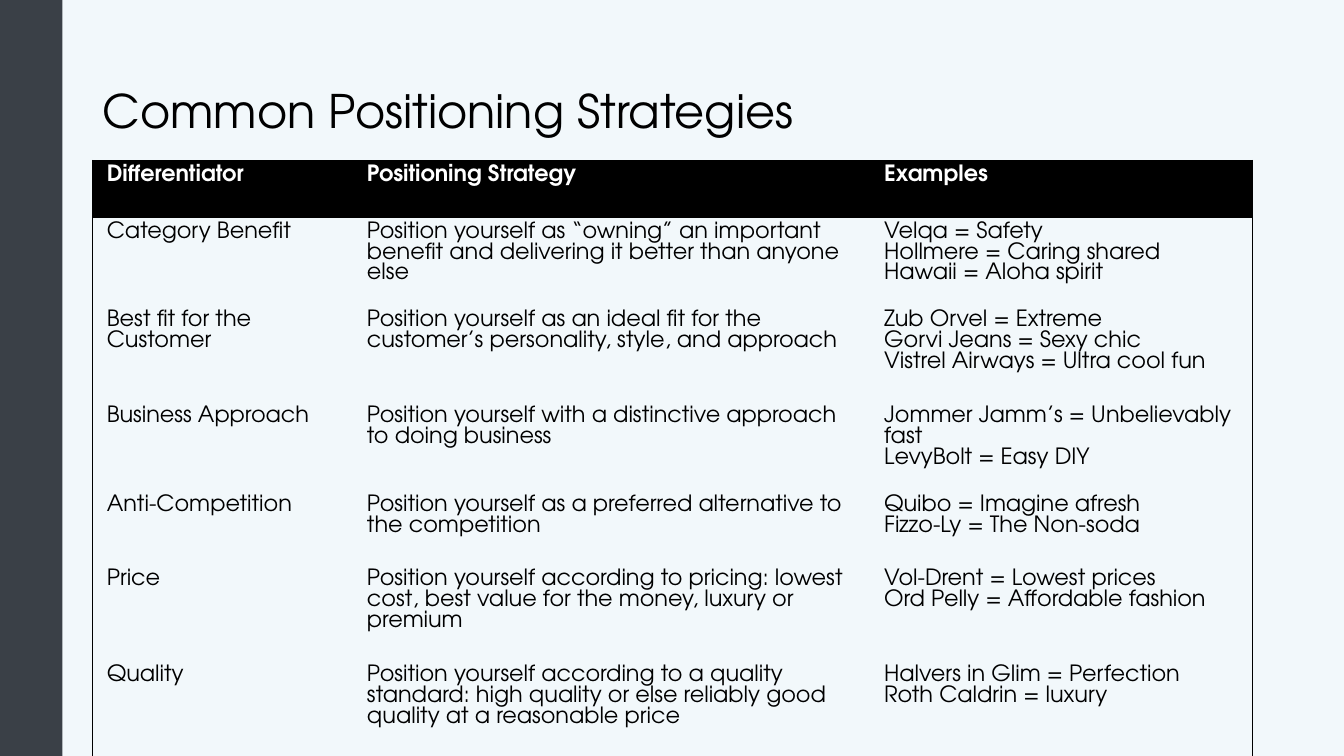
from lxml import etree
from pptx import Presentation
from pptx.dml.color import RGBColor
from pptx.enum.shapes import MSO_SHAPE
from pptx.enum.text import MSO_ANCHOR
from pptx.oxml.ns import qn
from pptx.util import Inches, Pt

RECT = MSO_SHAPE.RECTANGLE
MIDDLE = MSO_ANCHOR.MIDDLE
FONT = "TeX Gyre Adventor"
BLACK = RGBColor(0x00, 0x00, 0x00)
WHITE = RGBColor(0xFF, 0xFF, 0xFF)
SLATE = RGBColor(0x3A, 0x40, 0x47)
PALE = RGBColor(0xF2, 0xF8, 0xFB)

WIDE, HIGH = 13.33, 7.5
LEFT, SPAN = 0.92, 11.5
COLS = [2.58, 5.13, 3.79]
ROWS = [0.57, 0.88, 0.95, 0.88, 0.74, 0.95, 0.95]

# One row each: differentiator, strategy, examples
DATA = [
    ("Differentiator", "Positioning Strategy", "Examples"),
    ("Category Benefit",
     "Position yourself as “owning” an important benefit and delivering it "
     "better than anyone else",
     "Velqa = Safety\nHollmere = Caring shared\nHawaii = Aloha spirit"),
    ("Best fit for the Customer",
     "Position yourself as an ideal fit for the customer’s personality, "
     "style, and approach",
     "Zub Orvel = Extreme\nGorvi Jeans = Sexy chic\n"
     "Vistrel Airways = Ultra cool fun"),
    ("Business Approach",
     "Position yourself with a distinctive approach to doing business",
     "Jommer Jamm’s = Unbelievably fast\nLevyBolt = Easy DIY"),
    ("Anti-Competition",
     "Position yourself as a preferred alternative to the competition",
     "Quibo = Imagine afresh\nFizzo-Ly = The Non-soda"),
    ("Price",
     "Position yourself according to pricing: lowest cost, best value for "
     "the money, luxury or premium",
     "Vol-Drent = Lowest prices\nOrd Pelly = Affordable fashion"),
    ("Quality",
     "Position yourself according to a quality standard: high quality or "
     "else reliably good quality at a reasonable price",
     "Halvers in Glim = Perfection\nRoth Caldrin = luxury"),
]


def style(frame, size, color, bold=False):
    for para in frame.paragraphs:
        for run in para.runs:
            font = run.font
            font.name, font.size, font.bold = FONT, Pt(size), bold
            font.color.rgb = color


def border(cell, sides):
    """Draw the sides named in sides and clear the others."""
    props = cell._tc.get_or_add_tcPr()
    for spot, side in enumerate("LRTB"):
        line = etree.Element(qn("a:ln" + side), w=str(Pt(0.75)))
        if side in sides:
            fill = etree.SubElement(line, qn("a:solidFill"))
            etree.SubElement(fill, qn("a:srgbClr"), val=str(BLACK))
        else:
            etree.SubElement(line, qn("a:noFill"))
        props.insert(spot, line)


def add_bar(slide, x, y, w, h):
    bar = slide.shapes.add_shape(RECT, *map(Inches, (x, y, w, h)))
    bar.shadow.inherit = False
    bar.fill.solid()
    bar.fill.fore_color.rgb = SLATE
    bar.line.fill.background()


def add_title(slide, x, y, w, h):
    frame = slide.shapes.add_textbox(*map(Inches, (x, y, w, h))).text_frame
    frame.word_wrap = True
    frame.vertical_anchor = MIDDLE
    frame.text = "Common Positioning Strategies"
    frame.paragraphs[0].line_spacing = 0.9
    style(frame, 33, BLACK)


def add_grid(slide, x, y, w, h):
    box = map(Inches, (x, y, w, h))
    table = slide.shapes.add_table(len(ROWS), len(COLS), *box).table
    table.horz_banding = False
    for col, size in zip(table.columns, COLS):
        col.width = Inches(size)
    for row, size in zip(table.rows, ROWS):
        row.height = Inches(size)
    for r, texts in enumerate(DATA):
        head = r == 0
        for c, text in enumerate(texts):
            cell = table.cell(r, c)
            cell.text_frame.text = text
            style(cell.text_frame, 16, WHITE if head else BLACK, head)
            cell.margin_left = cell.margin_right = Inches(0.14)
            cell.margin_top = cell.margin_bottom = Inches(0.05 if head else 0.04)
            if head:
                cell.fill.solid()
                cell.fill.fore_color.rgb = BLACK
            else:
                cell.fill.background()
            # Only the outer edge of the table is ruled
            edges = {"L": c == 0, "R": c == len(COLS) - 1,
                     "T": head, "B": r == len(ROWS) - 1}
            border(cell, [side for side, on in edges.items() if on])


def main():
    deck = Presentation()
    deck.slide_width, deck.slide_height = Inches(WIDE), Inches(HIGH)
    slide = deck.slides.add_slide(deck.slide_layouts[6])
    slide.background.fill.solid()
    slide.background.fill.fore_color.rgb = PALE
    add_bar(slide, 0, 0, 0.62, HIGH)
    add_title(slide, LEFT, 0.4, SPAN, 1.45)
    add_grid(slide, LEFT, 1.59, SPAN, sum(ROWS))
    deck.save("out.pptx")


if __name__ == "__main__":
    main()
